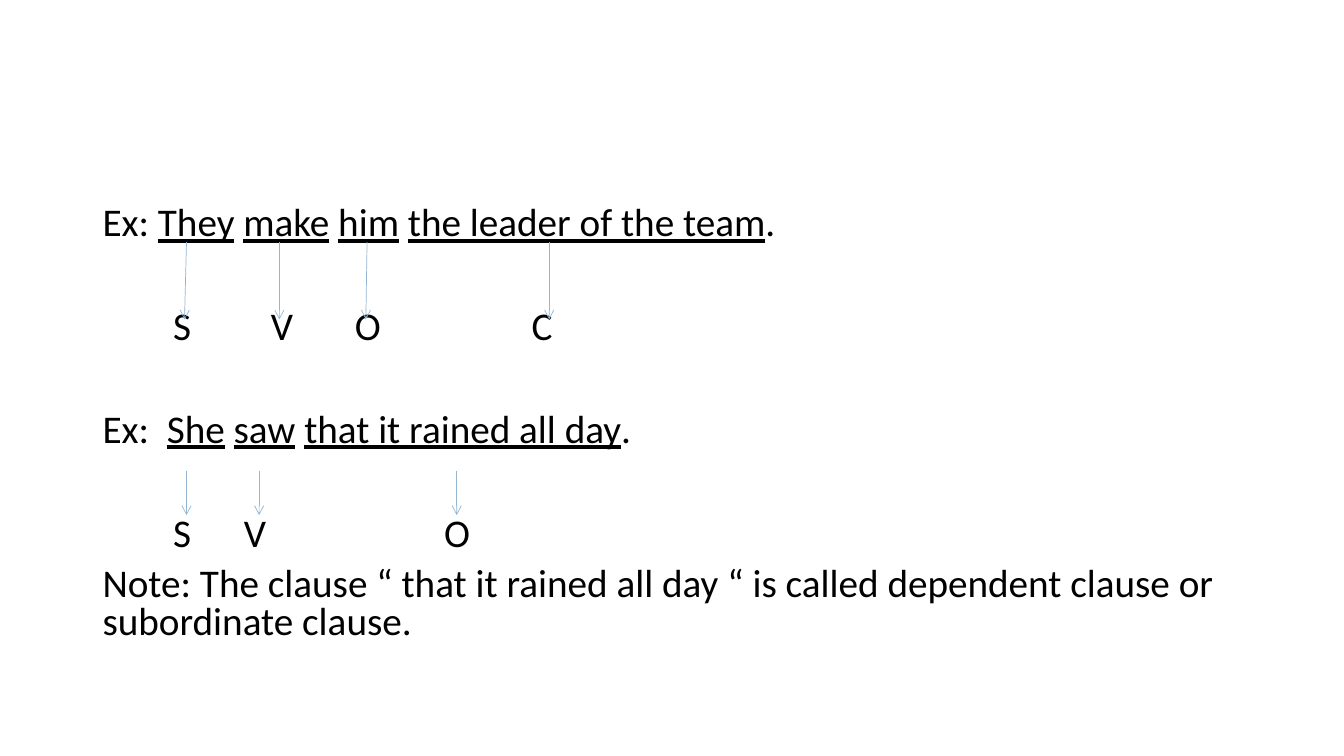
from dataclasses import dataclass

from lxml.etree import SubElement
from pptx import Presentation
from pptx.dml.color import RGBColor
from pptx.enum.shapes import MSO_CONNECTOR
from pptx.enum.text import MSO_AUTO_SIZE, PP_ALIGN
from pptx.oxml.ns import qn
from pptx.util import Cm, Pt


@dataclass(frozen=True)
class Theme:
    font: str = "Calibri"
    size: Pt = Pt(28)
    line_spacing: float = 0.8
    text: RGBColor = RGBColor(0x00, 0x00, 0x00)
    arrow: RGBColor = RGBColor(0x94, 0xB6, 0xD2)
    arrow_width: Pt = Pt(0.5)


theme = Theme()


def style_run(run, underline=False):
    run.font.name = theme.font
    run.font.size = theme.size
    run.font.color.rgb = theme.text
    run.font.underline = underline


# Each line: space before in points, pieces; every second piece is underlined
lines = [
    (0, ["Ex: ", "They", " ", "make", " ", "him", " ",
         "the leader of the team", "."]),
    (120.5, ["Ex:  ", "She", " ", "saw", " ", "that it rained all day", "."]),
    (83.5, ["Note: The clause “ that it rained all day “ is called "
            "dependent clause or subordinate clause."]),
]

# Each row in cm: arrow top, arrow bottom, letter top,
# then per sentence part: letter, letter centre, arrow start x, arrow end x
part_rows = [
    (6.1, 8.05, 7.82, [("S", 4.59, 4.7, 4.65), ("V", 7.11, 7.04, 7.04),
                       ("O", 9.27, 9.25, 9.22), ("C", 13.66, 13.84, 13.84)]),
    (11.86, 12.98, 13.03, [("S", 4.59, 4.7, 4.7), ("V", 6.43, 6.53, 6.53),
                           ("O", 11.52, 11.51, 11.51)]),
]
letter_size = 1.0

# Slide
presentation = Presentation()
presentation.slide_width, presentation.slide_height = Cm(33.87), Cm(19.05)
slide = presentation.slides.add_slide(presentation.slide_layouts[1])
empty_title = slide.shapes.title.element
empty_title.getparent().remove(empty_title)

# Example sentences and note
examples = slide.placeholders[1]
examples.left, examples.top = Cm(2.33), Cm(5.08)
examples.width, examples.height = Cm(29.21), Cm(12.09)
frame = examples.text_frame
frame.word_wrap = True
frame.auto_size = MSO_AUTO_SIZE.NONE

for number, (space, pieces) in enumerate(lines):
    paragraph = frame.add_paragraph() if number else frame.paragraphs[0]
    properties = paragraph._p.get_or_add_pPr()
    properties.set("marL", "0")
    properties.set("indent", "0")
    SubElement(properties, qn("a:buNone"))
    paragraph.line_spacing = theme.line_spacing
    paragraph.space_before = Pt(space)
    for index, piece in enumerate(pieces):
        run = paragraph.add_run()
        run.text = piece
        style_run(run, underline=index % 2 == 1)

# Arrows and the letters they point to
for arrow_top, arrow_bottom, letter_top, parts in part_rows:
    for letter, centre, start, end in parts:
        label = slide.shapes.add_textbox(
            Cm(centre - letter_size / 2), Cm(letter_top),
            Cm(letter_size), Cm(letter_size)).text_frame
        label.margin_left = label.margin_right = 0
        label.margin_top = label.margin_bottom = 0
        label.word_wrap = True
        label.text = letter
        label.paragraphs[0].alignment = PP_ALIGN.CENTER
        label.paragraphs[0].line_spacing = theme.line_spacing
        style_run(label.paragraphs[0].runs[0])

        arrow = slide.shapes.add_connector(
            MSO_CONNECTOR.STRAIGHT,
            Cm(start), Cm(arrow_top), Cm(end), Cm(arrow_bottom))
        arrow.line.color.rgb = theme.arrow
        arrow.line.width = theme.arrow_width
        SubElement(arrow.line._get_or_add_ln(), qn("a:tailEnd"), type="arrow")
        SubElement(arrow._element.spPr, qn("a:effectLst"))

presentation.save("out.pptx")
